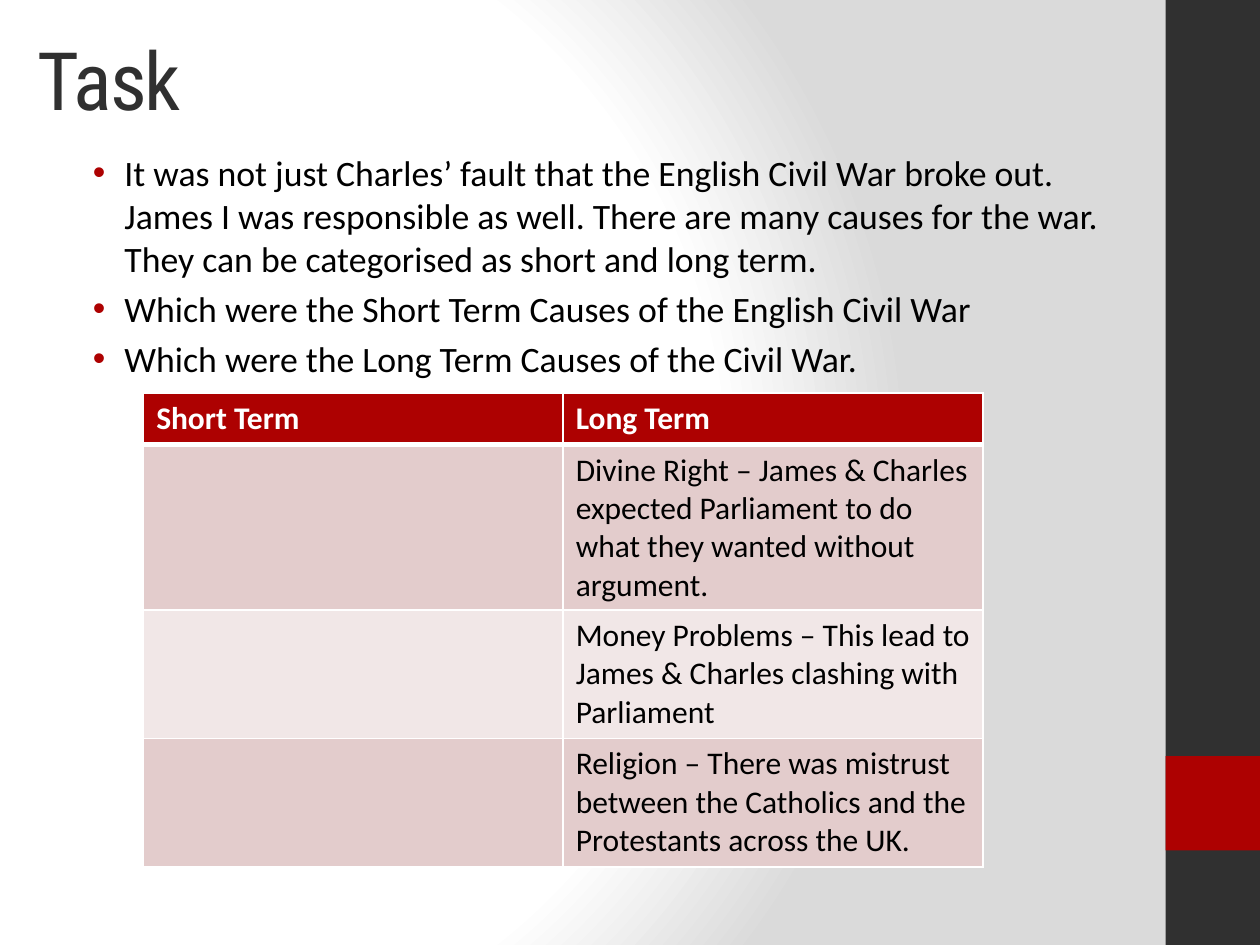
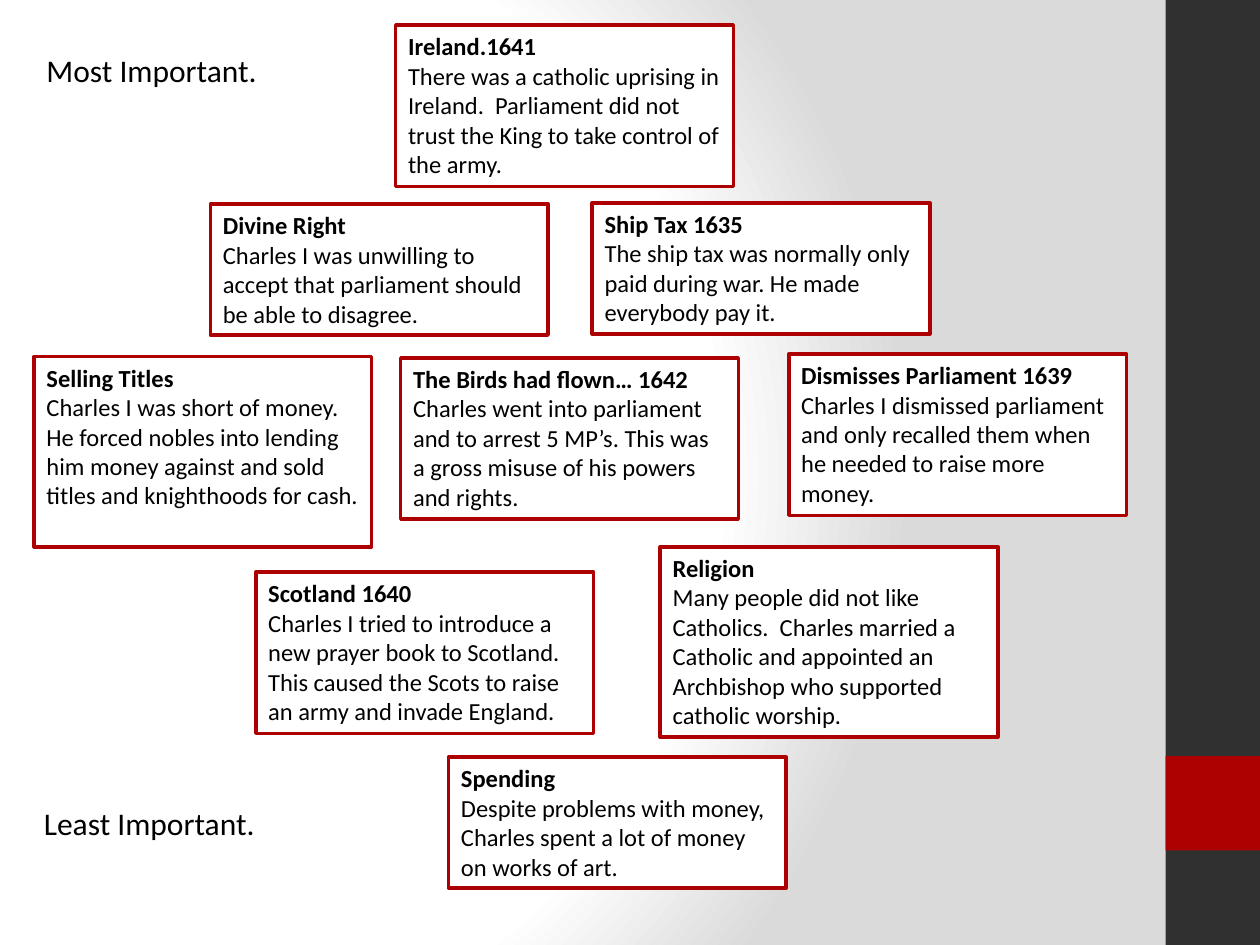
from pptx import Presentation
from pptx.dml.color import RGBColor
from pptx.enum.shapes import MSO_SHAPE
from pptx.enum.text import MSO_ANCHOR, PP_ALIGN
from pptx.oxml import parse_xml
from pptx.oxml.ns import nsdecls
from pptx.util import Inches, Pt

RECT = MSO_SHAPE.RECTANGLE
TOP, MIDDLE = MSO_ANCHOR.TOP, MSO_ANCHOR.MIDDLE
LEFT = PP_ALIGN.LEFT

COLORS = {
    "dark": "303030", "red": "AD0101", "white": "FFFFFF", "black": "000000",
    "grey": "DADADA", "row_odd": "E3CCCC", "row_even": "F1E7E7",
}
TITLE_FONT, BODY_FONT = "Roboto Condensed", "Calibri"

TITLE = "Task"
BULLETS = [
    "It was not just Charles’ fault that the English Civil War broke out. "
    "James I was responsible as well. There are many causes for the war. "
    "They can be categorised as short and long term.",
    "Which were the Short Term Causes of the English Civil War",
    "Which were the Long Term Causes of the Civil War.",
]
CAUSES = [
    ("Short Term", "Long Term"),
    ("", "Divine Right – James & Charles expected Parliament to do what they "
         "wanted without argument."),
    ("", "Money Problems – This lead to James & Charles clashing with Parliament"),
    ("", "Religion – There was mistrust between the Catholics and the "
         "Protestants across the UK."),
]
ROW_HEIGHTS = [0.41, 1.31, 1.02, 1.02]
COLUMN_WIDTH = 3.33

# Cards of the diamond: left, top, height, heading, text
CARD_WIDTH = 2.68
CARDS = [
    (3.14, 0.2, 1.28, "Ireland.1641",
     "There was a catholic uprising in Ireland.  Parliament did not trust the "
     "King to take control of the army."),
    (1.67, 1.62, 1.04, "Divine Right",
     "Charles I was unwilling to accept that parliament should be able to "
     "disagree."),
    (4.7, 1.61, 1.04, "Ship Tax 1635",
     "The ship tax was normally only paid during war. He made everybody pay it."),
    (0.27, 2.83, 1.51, "Selling Titles",
     "Charles I was short of money. He forced nobles into lending him money "
     "against and sold titles and knighthoods for cash."),
    (3.18, 2.84, 1.28, "The Birds had flown… 1642",
     "Charles went into parliament and to arrest 5 MP’s. This was a gross "
     "misuse of his powers and rights."),
    (6.26, 2.81, 1.28, "Dismisses Parliament 1639",
     "Charles I dismissed parliament and only recalled them when he needed to "
     "raise more money."),
    (2.03, 4.54, 1.28, "Scotland 1640",
     "Charles I tried to introduce a new prayer book to Scotland. This caused "
     "the Scots to raise an army and invade England."),
    (5.24, 4.34, 1.51, "Religion",
     "Many people did not like Catholics.  Charles married a Catholic and "
     "appointed an Archbishop who supported catholic worship."),
    (3.56, 6.01, 1.04, "Spending",
     "Despite problems with money, Charles spent a lot of money on works of art."),
]
SCALE_LABELS = [(0.27, 0.36, "Most Important."), (0.25, 6.33, "Least Important.")]


def rgb(name):
    return RGBColor.from_string(COLORS[name])


def style(p, size, color="black", bold=False, font=BODY_FONT):
    p.alignment = LEFT
    for r in p.runs:
        r.font.name, r.font.size, r.font.bold = font, Pt(size), bold
        r.font.color.rgb = rgb(color)


def add_box(slide, left, top, width, height, fill, line=None):
    sp = slide.shapes.add_shape(RECT, Inches(left), Inches(top),
                                Inches(width), Inches(height))
    sp.shadow.inherit = False
    sp.fill.solid()
    sp.fill.fore_color.rgb = rgb(fill)
    if line:
        sp.line.color.rgb = rgb(line)
        sp.line.width = Pt(2)
    else:
        sp.line.fill.background()
    return sp


def add_text(slide, left, top, width, height, text, anchor=TOP):
    tf = slide.shapes.add_textbox(Inches(left), Inches(top),
                                  Inches(width), Inches(height)).text_frame
    tf.word_wrap = True
    tf.vertical_anchor = anchor
    tf.text = text
    return tf


def set_background(slide):
    """Fill the slide with the circular white to grey gradient."""
    stops = [(0, "white"), (75, "white"), (100, "grey")]
    gs = "".join(f'<a:gs pos="{pos * 1000}"><a:srgbClr val="{COLORS[c]}"/></a:gs>'
                 for pos, c in stops)
    slide.element.cSld.insert(0, parse_xml(
        f'<p:bg {nsdecls("p", "a")}><p:bgPr><a:gradFill rotWithShape="1">'
        f'<a:gsLst>{gs}</a:gsLst><a:path path="circle">'
        '<a:fillToRect l="20000" t="50000" r="100000" b="50000"/></a:path>'
        '</a:gradFill><a:effectLst/></p:bgPr></p:bg>'))


def new_slide(prs):
    slide = prs.slides.add_slide(prs.slide_layouts[6])
    set_background(slide)
    add_box(slide, 9.25, 0, 0.75, 7.5, "dark")
    add_box(slide, 9.25, 6, 0.75, 0.75, "red")
    return slide


def add_bullet(p):
    pPr = p._p.get_or_add_pPr()
    pPr.set("marL", str(Inches(0.38)))
    pPr.set("indent", str(Inches(-0.25)))
    for tag in (f'<a:buClr {nsdecls("a")}><a:srgbClr val="{COLORS["red"]}"/></a:buClr>',
                f'<a:buFont {nsdecls("a")} typeface="Arial"/>',
                f'<a:buChar {nsdecls("a")} char="•"/>'):
        pPr.append(parse_xml(tag))


def set_borders(cell, bottom):
    widths = {"lnL": 1, "lnR": 1, "lnT": 1, "lnB": bottom}
    tcPr = cell._tc.get_or_add_tcPr()
    for i, (side, width) in enumerate(widths.items()):
        tcPr.insert(i, parse_xml(
            f'<a:{side} {nsdecls("a")} w="{Pt(width)}"><a:solidFill>'
            f'<a:srgbClr val="{COLORS["white"]}"/></a:solidFill></a:{side}>'))


def add_causes_table(slide):
    table = slide.shapes.add_table(
        len(CAUSES), 2, Inches(1.14), Inches(3.12),
        Inches(2 * COLUMN_WIDTH), Inches(sum(ROW_HEIGHTS))).table
    for column in table.columns:
        column.width = Inches(COLUMN_WIDTH)
    for i, texts in enumerate(CAUSES):
        header = i == 0
        fill = "red" if header else "row_odd" if i % 2 else "row_even"
        table.rows[i].height = Inches(ROW_HEIGHTS[i])
        for j, text in enumerate(texts):
            cell = table.cell(i, j)
            cell.text = text
            style(cell.text_frame.paragraphs[0], 18,
                  "white" if header else "black", bold=header)
            cell.fill.solid()
            cell.fill.fore_color.rgb = rgb(fill)
            set_borders(cell, bottom=3 if header or i == 0 else 1)


def build_task(prs):
    slide = new_slide(prs)
    p = add_text(slide, 0.2, 0, 8.33, 1.25, TITLE, MIDDLE).paragraphs[0]
    style(p, 46, "dark", font=TITLE_FONT)
    p.runs[0].font._element.set("spc", "-100")

    tf = add_text(slide, 0.51, 1.15, 8.33, 1.76, "\n".join(BULLETS))
    for p in tf.paragraphs:
        style(p, 20.4)
        p.space_before = Pt(4)
        add_bullet(p)
    add_causes_table(slide)


def build_ranking(prs):
    slide = new_slide(prs)
    for left, top, height, heading, text in CARDS:
        sp = add_box(slide, left, top, CARD_WIDTH, height, "white", "red")
        tf = sp.text_frame
        tf.word_wrap = True
        tf.vertical_anchor = TOP
        tf.text = f"{heading}\n{text}"
        style(tf.paragraphs[0], 14, bold=True)
        style(tf.paragraphs[1], 14)
    for left, top, text in SCALE_LABELS:
        style(add_text(slide, left, top, 1.97, 0.4, text).paragraphs[0], 18)


def main():
    prs = Presentation()
    prs.slide_width, prs.slide_height = Inches(10), Inches(7.5)
    build_task(prs)
    build_ranking(prs)
    prs.save("out.pptx")


if __name__ == "__main__":
    main()
